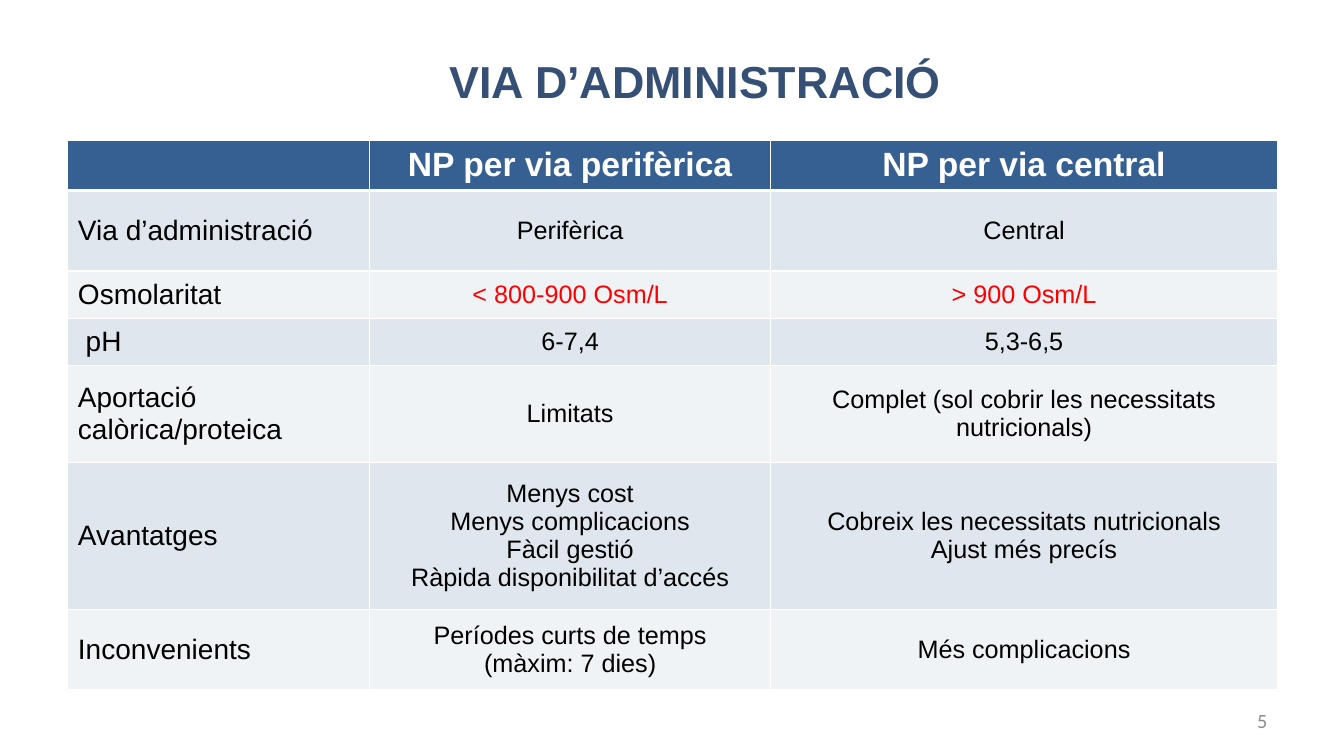
import dataclasses
import typing

import lxml.etree
import pptx
import pptx.dml.color
import pptx.enum.text
import pptx.oxml.ns
import pptx.util

Pt = pptx.util.Pt
Align = pptx.enum.text.PP_ALIGN
Anchor = pptx.enum.text.MSO_ANCHOR

COLORS = {
    "title": "364F74",
    "head": "376092",
    "dark": "DFE6ED",
    "light": "F0F3F6",
    "white": "FFFFFF",
    "black": "000000",
    "red": "FF0000",
    "gray": "8C8C8C",
}


@dataclasses.dataclass(frozen=True)
class Style:
    size: float
    color: str = "black"
    bold: bool = False
    align: Align = Align.CENTER
    face: str = "Arial"


@dataclasses.dataclass(frozen=True)
class Row:
    height: float
    label: str
    outer: tuple[str, ...]
    inner: tuple[str, ...]
    color: str = "black"


TITLE = Style(32, "title", True)
HEAD = Style(24, "white", True)
LABEL = Style(20, align=Align.LEFT)
NUMBER = Style(14.4, "gray", align=Align.RIGHT, face="Calibri")

WIDTHS = (215.5, 286.5, 362)
ROWS = (
    Row(36, "", ("NP per via perifèrica",), ("NP per via central",)),
    Row(57.6, "Via d’administració", ("Perifèrica",), ("Central",)),
    Row(33.7, "Osmolaritat", ("< 800-900 Osm/L",), ("> 900 Osm/L",), "red"),
    Row(33.7, " pH", ("6-7,4",), ("5,3-6,5",)),
    Row(69.3, "Aportació calòrica/proteica", ("Limitats",),
        ("Complet (sol cobrir les necessitats nutricionals)",)),
    Row(105, "Avantatges",
        ("Menys cost", "Menys complicacions", "Fàcil gestió",
         "Ràpida disponibilitat d’accés"),
        ("Cobreix les necessitats nutricionals", "Ajust més precís")),
    Row(57.6, "Inconvenients", ("Períodes curts de temps\n(màxim: 7 dies)",),
        ("Més complicacions",)),
)


def rgb(name: str) -> pptx.dml.color.RGBColor:
    return pptx.dml.color.RGBColor.from_string(COLORS[name])


def write(frame: typing.Any, lines: typing.Sequence[str], style: Style) -> None:
    for index, line in enumerate(lines):
        para = frame.add_paragraph() if index else frame.paragraphs[0]
        para.text = line
        para.alignment = style.align
        para.font.name = style.face
        para.font.size = Pt(style.size)
        para.font.bold = style.bold
        para.font.color.rgb = rgb(style.color)


def border(cell: typing.Any, top: float, bottom: float) -> None:
    props = cell._tc.get_or_add_tcPr()
    sides = {"lnL": 1, "lnR": 1, "lnT": top, "lnB": bottom}
    for index, (side, width) in enumerate(sides.items()):
        line = lxml.etree.Element(pptx.oxml.ns.qn(f"a:{side}"), w=str(Pt(width)))
        fill = lxml.etree.SubElement(line, pptx.oxml.ns.qn("a:solidFill"))
        lxml.etree.SubElement(
            fill, pptx.oxml.ns.qn("a:srgbClr"), val=COLORS["white"])
        props.insert(index, line)


def fill_row(table: typing.Any, index: int, row: Row) -> None:
    table.rows[index].height = Pt(row.height)
    body = Style(18, row.color) if index else HEAD
    shade = ("light" if index % 2 == 0 else "dark") if index else "head"
    texts = ((row.label,), row.outer, row.inner)
    for col, lines in enumerate(texts):
        cell = table.cell(index, col)
        cell.vertical_anchor = Anchor.MIDDLE
        cell.fill.solid()
        cell.fill.fore_color.rgb = rgb(shade)
        border(cell, 3 if index == 1 else 1, 3 if index == 0 else 1)
        write(cell.text_frame, lines, body if col else LABEL)


def main() -> None:
    deck = pptx.Presentation()
    deck.slide_width, deck.slide_height = Pt(960), Pt(540)
    slide = deck.slides.add_slide(deck.slide_layouts.get_by_name("Title Only"))

    title = slide.shapes.title
    title.left, title.top = Pt(43.2), Pt(26)
    title.width, title.height = Pt(907.2), Pt(62.6)
    title.text_frame.vertical_anchor = Anchor.MIDDLE
    write(title.text_frame, ("VIA D’ADMINISTRACIÓ",), TITLE)

    table = slide.shapes.add_table(
        len(ROWS), len(WIDTHS), Pt(48.5), Pt(100),
        Pt(sum(WIDTHS)), Pt(sum(row.height for row in ROWS))).table
    for column, width in zip(table.columns, WIDTHS):
        column.width = Pt(width)
    for index, row in enumerate(ROWS):
        fill_row(table, index, row)

    number = slide.shapes.add_textbox(Pt(688.3), Pt(500.4), Pt(224), Pt(28.8))
    number.text_frame.word_wrap = True
    number.text_frame.vertical_anchor = Anchor.MIDDLE
    write(number.text_frame, ("5",), NUMBER)

    deck.save("out.pptx")


if __name__ == "__main__":
    main()
